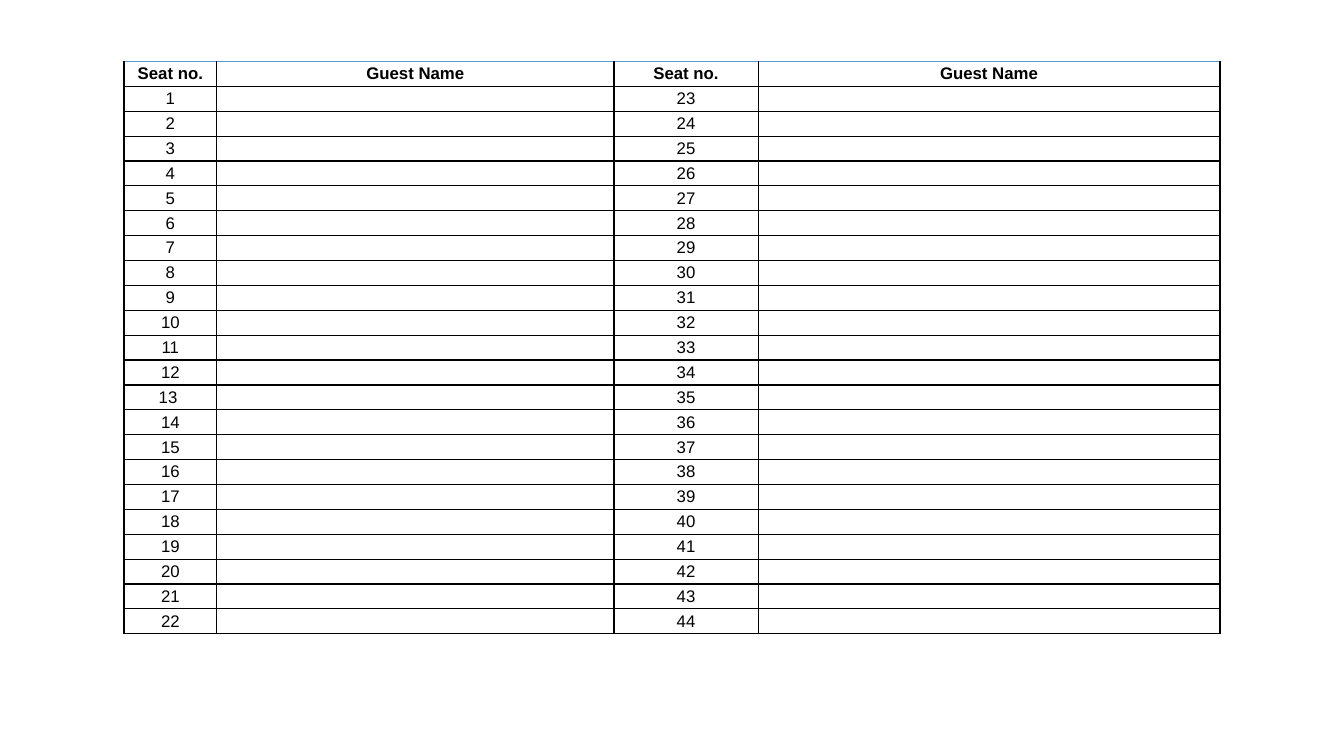
from lxml.etree import SubElement
from pptx import Presentation
from pptx.dml.color import RGBColor
from pptx.enum.text import MSO_ANCHOR, PP_ALIGN
from pptx.oxml.ns import qn
from pptx.util import Inches, Pt

HEADINGS = ["Seat no.", "Guest Name"] * 2
SEATS_PER_SIDE = 22
SEAT_LABELS = {13: "13 "}
COLUMN_WIDTHS = [0.92, 3.94, 1.43, 4.58]
LEFT, TOP, HEIGHT = 1.23, 0.61, 5.68
COLORS = {"ink": "000000", "top_edge": "5B9BD5"}
FONT, SIZE = "Arial", 12


def seat_row(seat):
    return [SEAT_LABELS.get(seat, str(seat)), "", str(seat + SEATS_PER_SIDE), ""]


def draw_borders(cell, top):
    properties = cell._tc.get_or_add_tcPr()
    edges = {"L": COLORS["ink"], "R": COLORS["ink"], "T": top, "B": COLORS["ink"]}
    for side, color in edges.items():
        line = SubElement(properties, qn(f"a:ln{side}"), w=str(Pt(1)))
        fill = SubElement(line, qn("a:solidFill"))
        SubElement(fill, qn("a:srgbClr"), val=color)


def write_text(cell, text, bold=False, color=COLORS["ink"]):
    """Centre the text; an empty cell keeps the same text size so rows stay low."""
    cell.vertical_anchor = MSO_ANCHOR.MIDDLE
    cell.margin_left = cell.margin_right = cell.margin_top = cell.margin_bottom = 0
    paragraph = cell.text_frame.paragraphs[0]
    paragraph.alignment = PP_ALIGN.CENTER
    if not text:
        SubElement(paragraph._p, qn("a:endParaRPr"), sz=str(SIZE * 100))
        return
    run = paragraph.add_run()
    run.text = text
    run.font.name = FONT
    run.font.size = Pt(SIZE)
    run.font.bold = bold
    run.font.color.rgb = RGBColor.from_string(color)


def main():
    presentation = Presentation()
    presentation.slide_width = Inches(13.33)
    presentation.slide_height = Inches(7.5)
    slide = presentation.slides.add_slide(presentation.slide_layouts[6])

    rows = [HEADINGS] + [seat_row(seat) for seat in range(1, SEATS_PER_SIDE + 1)]
    seating = slide.shapes.add_table(
        len(rows), len(HEADINGS), Inches(LEFT), Inches(TOP),
        Inches(sum(COLUMN_WIDTHS)), Inches(HEIGHT)).table
    seating.first_row = False
    seating.horz_banding = False
    for column, width in zip(seating.columns, COLUMN_WIDTHS):
        column.width = Inches(width)

    for r, texts in enumerate(rows):
        is_heading = r == 0
        for c, text in enumerate(texts):
            cell = seating.cell(r, c)
            draw_borders(cell, COLORS["top_edge" if is_heading else "ink"])
            cell.fill.background()
            write_text(cell, text, bold=is_heading)

    presentation.save("out.pptx")


if __name__ == "__main__":
    main()
